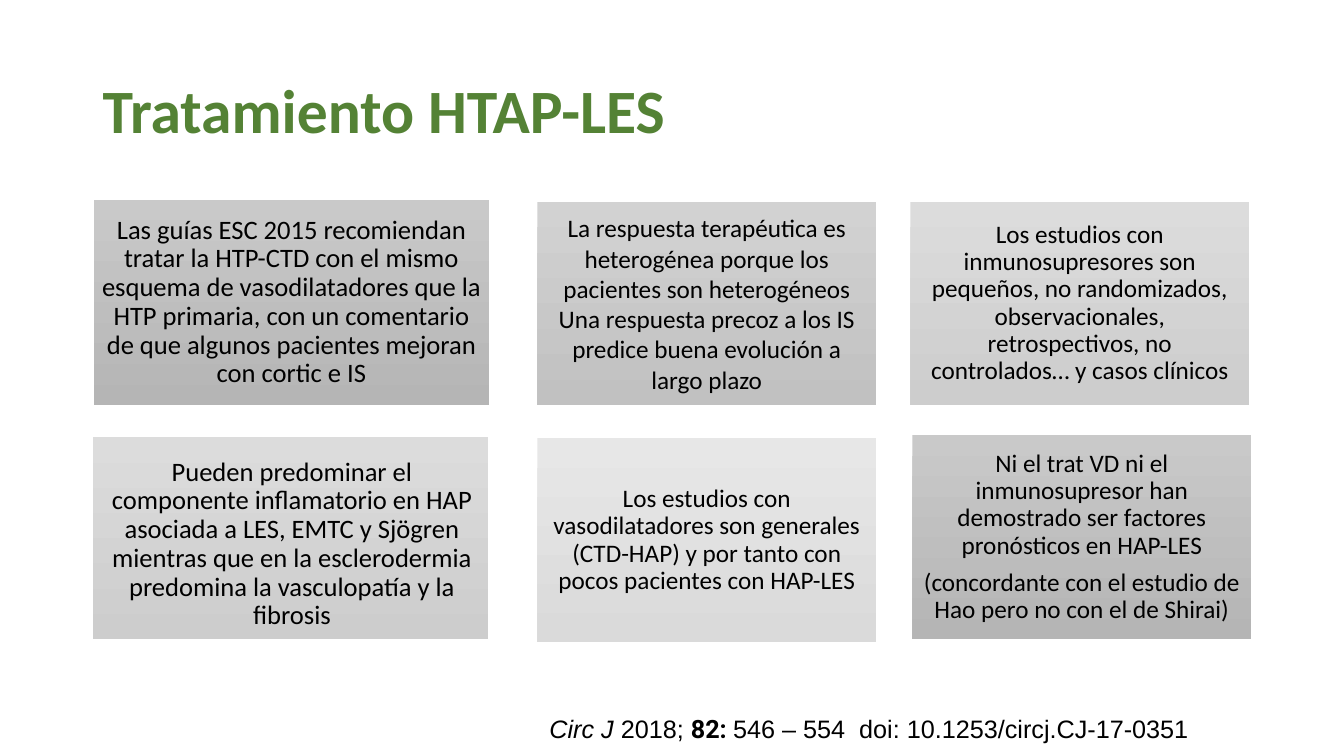
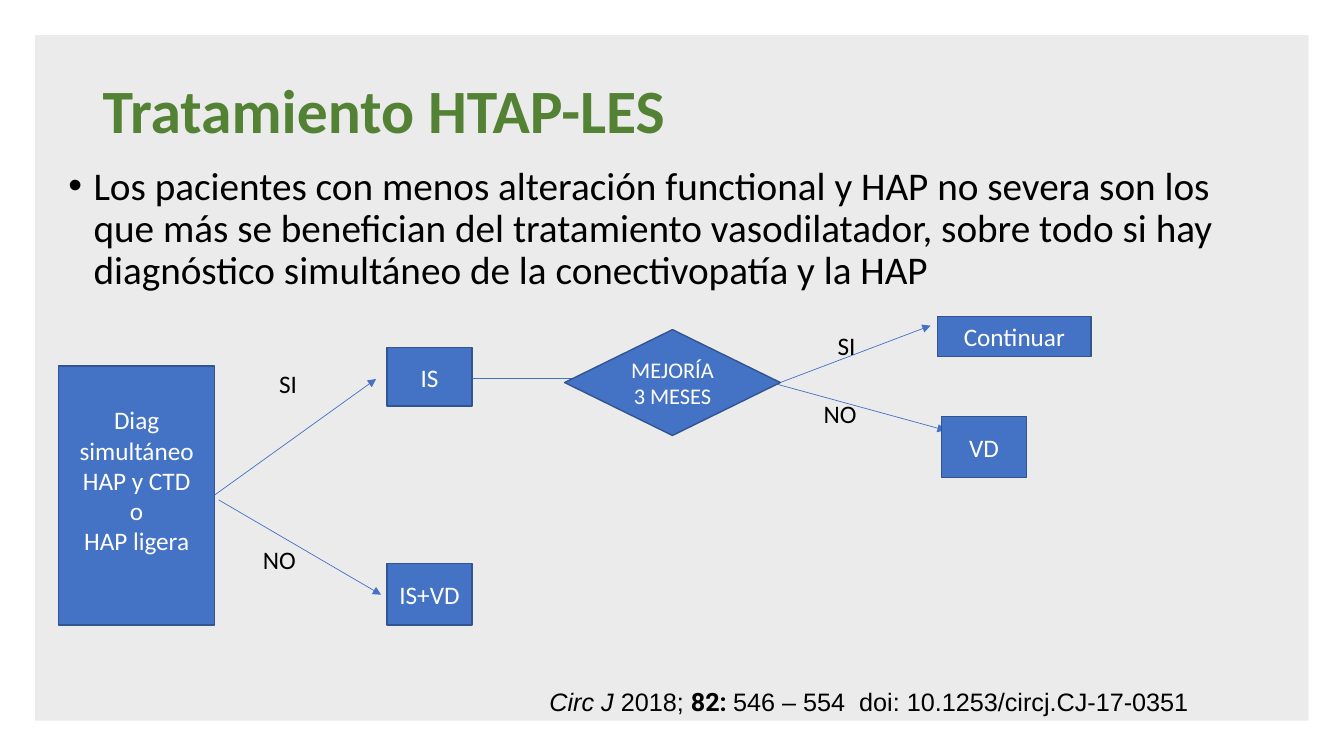
"""Builds two slides on the treatment of HTAP-LES: key points and a decision flow."""
from lxml.etree import SubElement
from pptx import Presentation
from pptx.dml.color import RGBColor
from pptx.enum.shapes import MSO_CONNECTOR, MSO_SHAPE
from pptx.enum.text import MSO_ANCHOR, PP_ALIGN
from pptx.oxml.ns import qn
from pptx.util import Inches, Pt

BLACK = RGBColor(0x00, 0x00, 0x00)
WHITE = RGBColor(0xFF, 0xFF, 0xFF)
GREEN = RGBColor(0x54, 0x82, 0x35)
BLUE = RGBColor(0x44, 0x72, 0xC4)
DARK_BLUE = RGBColor(0x32, 0x54, 0x91)
GREYS = {
    "dark": (RGBColor(0xC9, 0xC9, 0xC9), RGBColor(0xB5, 0xB5, 0xB5)),
    "medium": (RGBColor(0xD2, 0xD2, 0xD2), RGBColor(0xC1, 0xC1, 0xC1)),
    "light": (RGBColor(0xDC, 0xDC, 0xDC), RGBColor(0xCD, 0xCD, 0xCD)),
    "pale": (RGBColor(0xE7, 0xE7, 0xE7), RGBColor(0xDA, 0xDA, 0xDA)),
}
MARGINS = ("margin_left", "margin_top", "margin_right", "margin_bottom")
CENTRED = {"alignment": PP_ALIGN.CENTER}
TIGHT = {"line_spacing": 0.9}
MIDDLE = {"vertical_anchor": MSO_ANCHOR.MIDDLE}


def write(shape, paragraphs, color=BLACK, font={}, layout={}, frame={}):
    """Fills a shape with paragraphs, each a list of (text, font changes) runs."""
    text_frame = shape.text_frame
    for name, value in {"word_wrap": True, **frame}.items():
        setattr(text_frame, name, value)
    for index, runs in enumerate(paragraphs):
        paragraph = text_frame.add_paragraph() if index else text_frame.paragraphs[0]
        for name, value in layout.items():
            setattr(paragraph, name, value)
        for text, changes in runs:
            run = paragraph.add_run()
            run.text = text
            run.font.color.rgb = color
            for name, value in {"name": "Calibri", "size": Pt(18), **font, **changes}.items():
                setattr(run.font, name, value)
    return text_frame


def add_shape(slide, kind, box):
    """Adds a preset shape without shadow at a box given in inches."""
    shape = slide.shapes.add_shape(kind, *map(Inches, box))
    shape.shadow.inherit = False
    return shape


presentation = Presentation()
presentation.slide_width, presentation.slide_height = Inches(13.33), Inches(7.5)
CITATION = [
    ("Circ J ", {"italic": True}),
    ("2018; ", {}),
    ("82: ", {"name": "Roboto", "bold": True}),
    ("546 – 554  doi: 10.1253/circj.CJ-17-0351", {}),
]

for citation_top, has_panel in ((7.03, False), (6.76, True)):
    slide = presentation.slides.add_slide(presentation.slide_layouts[6])
    if has_panel:
        panel = add_shape(slide, MSO_SHAPE.RECTANGLE, (0.35, 0.35, 12.63, 6.8))
        panel.fill.solid()
        panel.fill.fore_color.rgb = BLACK
        panel.line.fill.background()
        panel_color = panel.element.spPr.find(".//" + qn("a:srgbClr"))
        SubElement(panel_color, qn("a:alpha"), val="8000")
    title = slide.shapes.add_textbox(Inches(0.92), Inches(0.4), Inches(11.5), Inches(1.45))
    write(title, [[("Tratamiento HTAP-LES", {})]], GREEN,
          {"size": Pt(44), "bold": True}, TIGHT, MIDDLE)
    citation = slide.shapes.add_textbox(Inches(5.35), Inches(citation_top), Inches(7.98), Inches(0.4))
    write(citation, [CITATION], font={"name": "Arial"})

points_slide, flow_slide = presentation.slides

POINTS = [
    ((0.93, 1.98, 3.92, 2.04), "dark", 19, 0.9, (0.08, 0.08, 0.08, 0.08),
     ["Las guías ESC 2015 recomiendan tratar la HTP-CTD con el mismo esquema de "
      "vasodilatadores que la HTP primaria, con un comentario de que algunos "
      "pacientes mejoran con cortic e IS"]),
    ((5.33, 2, 3.36, 2.02), "medium", 18, 1.0, (0.15, 0.15, 0.15, 0.15),
     ["La respuesta terapéutica es heterogénea porque los pacientes son heterogéneos "
      "Una respuesta precoz a los IS predice buena evolución a largo plazo"]),
    ((9.03, 2, 3.36, 2.02), "light", 18, 0.9, (0.07, 0.07, 0.07, 0.07),
     ["Los estudios con inmunosupresores son pequeños, no randomizados, "
      "observacionales, retrospectivos, no controlados… y casos clínicos"]),
    ((0.92, 4.34, 3.92, 2), "light", 19, 0.9, (0.16, 0.2, 0.13, 0.08),
     ["Pueden predominar el componente inflamatorio en HAP asociada a LES, EMTC y "
      "Sjögren mientras que en la esclerodermia predomina la vasculopatía y la fibrosis"]),
    ((5.33, 4.35, 3.36, 2.02), "pale", 18, 0.9, (0.07, 0.07, 0.07, 0.07),
     ["Los estudios con vasodilatadores son generales (CTD-HAP) y por tanto con "
      "pocos pacientes con HAP-LES"]),
    ((9.05, 4.32, 3.36, 2.02), "dark", 18, 0.9, (0.07, 0.07, 0.07, 0.07),
     ["Ni el trat VD ni el inmunosupresor han demostrado ser factores pronósticos en HAP-LES",
      "(concordante con el estudio de Hao pero no con el de Shirai)"]),
]
for box, grey, size, spacing, margins, texts in POINTS:
    card = add_shape(points_slide, MSO_SHAPE.RECTANGLE, box)
    card.fill.gradient()
    card.fill.gradient_angle = 270
    for stop, color in zip(card.fill.gradient_stops, GREYS[grey]):
        stop.color.rgb = color
    card.line.fill.background()
    text_frame = write(card, [[(text, {})] for text in texts], font={"size": Pt(size)},
                       layout={**CENTRED, "line_spacing": spacing},
                       frame={**MIDDLE, **dict(zip(MARGINS, map(Inches, margins)))})
    for paragraph in text_frame.paragraphs[1:]:
        paragraph.space_before = Pt(7)

body = flow_slide.shapes.add_textbox(Inches(0.58), Inches(1.6), Inches(11.64), Inches(1.45))
write(body, [[("Los pacientes con menos alteración functional y HAP no severa son los que más "
               "se benefician del tratamiento vasodilatador, sobre todo si hay diagnóstico "
               "simultáneo de la conectivopatía y la HAP", {})]],
      font={"size": Pt(28)}, layout=TIGHT)
for properties in body.element.iter(qn("a:pPr")):
    properties.set("marL", str(Inches(0.25)))
    properties.set("indent", str(-Inches(0.25)))
    SubElement(properties, qn("a:buFont"), typeface="Arial")
    SubElement(properties, qn("a:buChar"), char="•")

ARROWS = [
    ((2.13, 4.91), (3.73, 3.76)),
    ((2.17, 4.96), (3.78, 5.9)),
    ((4.68, 3.75), (6.64, 3.75)),
    ((7.7, 3.81), (9.23, 3.23)),
    ((7.7, 3.81), (9.38, 4.27)),
]
for start, end in ARROWS:
    arrow = flow_slide.shapes.add_connector(MSO_CONNECTOR.STRAIGHT, *map(Inches, start + end))
    arrow.line.color.rgb = BLUE
    arrow.line.width = Pt(0.5)
    SubElement(arrow.element.spPr.find(qn("a:ln")), qn("a:tailEnd"), type="triangle")
    SubElement(arrow.element.spPr, qn("a:effectLst"))

STEPS = [
    (MSO_SHAPE.RECTANGLE, (0.58, 3.63, 1.55, 2.57), 18, 0.35,
     ["Diag simultáneo", "HAP y CTD", "o", "HAP ligera"]),
    (MSO_SHAPE.RECTANGLE, (3.84, 3.45, 0.84, 0.58), 18, 0.05, ["IS"]),
    (MSO_SHAPE.RECTANGLE, (3.84, 5.59, 0.84, 0.61), 18, 0.05, ["IS+VD"]),
    (MSO_SHAPE.DIAMOND, (5.6, 3.27, 2.14, 1.05), 16, 0.05, ["MEJORÍA 3 MESES"]),
    (MSO_SHAPE.RECTANGLE, (9.34, 4.13, 0.84, 0.61), 18, 0.05, ["VD"]),
    (MSO_SHAPE.RECTANGLE, (9.3, 3.14, 1.52, 0.4), 18, 0.05, ["Continuar"]),
]
for kind, box, size, bottom, texts in STEPS:
    step = add_shape(flow_slide, kind, box)
    step.fill.solid()
    step.fill.fore_color.rgb = BLUE
    step.line.color.rgb = DARK_BLUE
    step.line.width = Pt(1)
    write(step, [[(text, {})] for text in texts], WHITE, {"size": Pt(size)}, CENTRED,
          {**MIDDLE, "margin_bottom": Inches(bottom)})

for text, left, top in (("SI", 2.67, 3.61), ("NO", 2.51, 5.35), ("SI", 8.21, 3.23), ("NO", 8.07, 3.9)):
    label = flow_slide.shapes.add_textbox(Inches(left), Inches(top), Inches(0.63), Inches(0.4))
    write(label, [[(text, {})]])

presentation.save("out.pptx")
